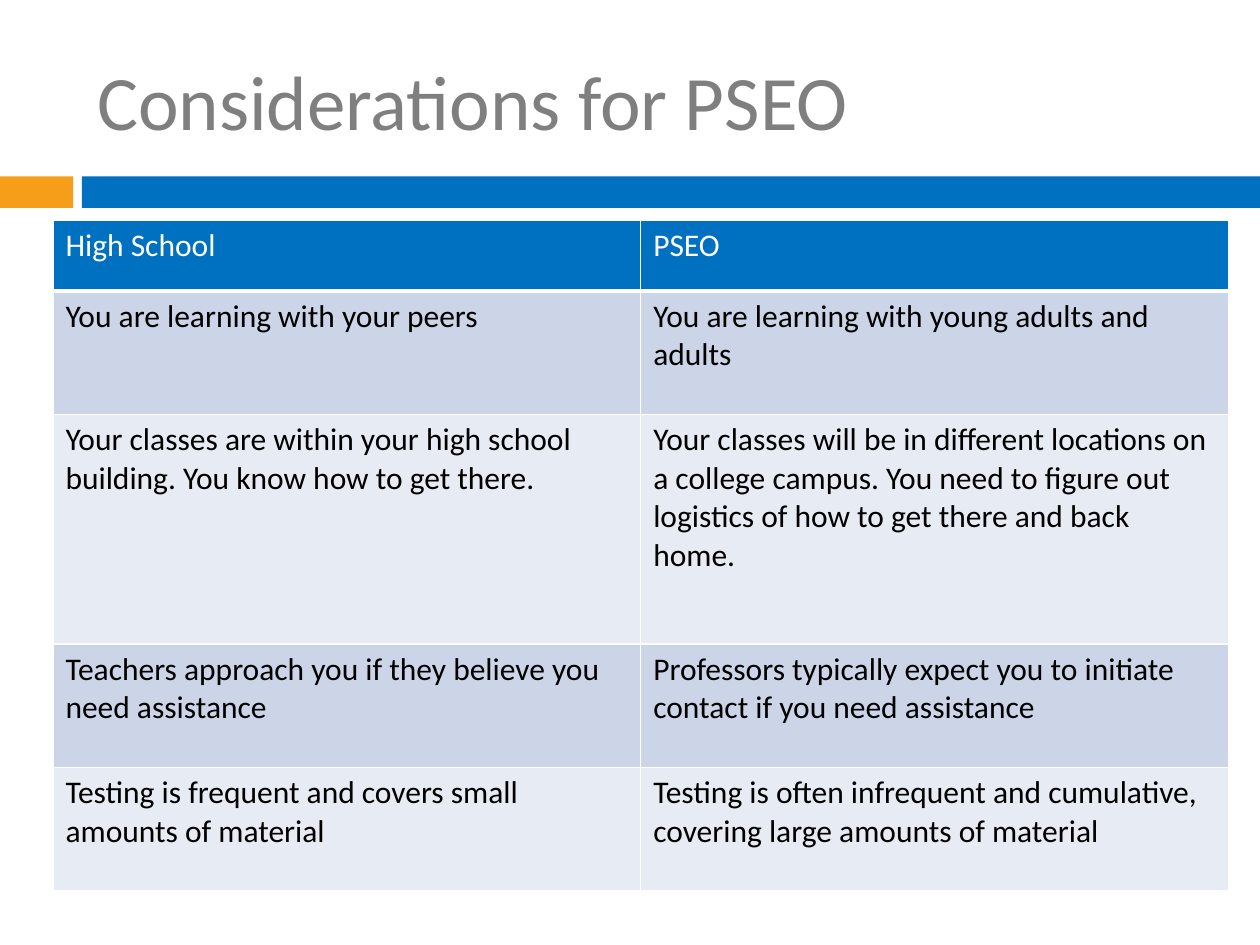
from lxml.etree import SubElement
from pptx import Presentation
from pptx.dml.color import RGBColor
from pptx.enum.shapes import MSO_SHAPE
from pptx.enum.text import MSO_ANCHOR, PP_ALIGN
from pptx.oxml.ns import qn
from pptx.util import Inches, Pt

COLORS = {
    "orange": "F69D1A",
    "blue": "0070C0",
    "title": "7F7F7F",
    "white": "FFFFFF",
    "black": "000000",
    "band_dark": "CCD5E8",
    "band_light": "E7EBF4",
}
ROWS = [
    ("High School", "PSEO"),
    ("You are learning with your peers",
     "You are learning with young adults and adults"),
    ("Your classes are within your high school building. "
     "You know how to get there.",
     "Your classes will be in different locations on a college campus. "
     "You need to figure out logistics of how to get there and back home."),
    ("Teachers approach you if they believe you need assistance",
     "Professors typically expect you to initiate contact if you need assistance"),
    ("Testing is frequent and covers small amounts of material",
     "Testing is often infrequent and cumulative, "
     "covering large amounts of material"),
]
ROW_HEIGHTS = [0.56, 0.98, 1.82, 0.98, 0.98]


def rgb(name):
    """Return the named colour."""
    return RGBColor.from_string(COLORS[name])


def write(tf, text, size=18, color="black", font="Calibri"):
    """Put one formatted, left-aligned paragraph in a text frame."""
    p = tf.paragraphs[0]
    p.alignment = PP_ALIGN.LEFT
    r = p.add_run()
    r.text = text
    r.font.name = font
    r.font.size = Pt(size)
    r.font.bold = False
    r.font.color.rgb = rgb(color)


def add_title(s, text):
    """Place and format the title placeholder."""
    sp = s.shapes.title
    sp.left, sp.top = Inches(0.67), Inches(0.25)
    sp.width, sp.height = Inches(8.92), Inches(1.08)
    tf = sp.text_frame
    tf.word_wrap = True
    tf.vertical_anchor = MSO_ANCHOR.MIDDLE
    write(tf, text, size=44, color="title")


def add_bar(s, left, width, color):
    """Add one part of the bar under the title."""
    sp = s.shapes.add_shape(MSO_SHAPE.RECTANGLE, Inches(left), Inches(1.4),
                            Inches(width), Inches(0.25))
    sp.shadow.inherit = False
    sp.fill.solid()
    sp.fill.fore_color.rgb = rgb(color)
    sp.line.fill.background()


def set_borders(cell, bottom=1):
    """Draw white borders around a cell."""
    tcPr = cell._tc.get_or_add_tcPr()
    for side, width in (("L", 1), ("R", 1), ("T", 1), ("B", bottom)):
        ln = SubElement(tcPr, qn(f"a:ln{side}"), w=str(Pt(width)))
        fill = SubElement(ln, qn("a:solidFill"))
        SubElement(fill, qn("a:srgbClr"), val=COLORS["white"])


def add_comparison(s):
    """Add the table with its header and alternating bands."""
    table = s.shapes.add_table(len(ROWS), 2, Inches(0.42), Inches(1.75),
                               Inches(9.33), Inches(sum(ROW_HEIGHTS))).table
    for i, (texts, height) in enumerate(zip(ROWS, ROW_HEIGHTS)):
        table.rows[i].height = Inches(height)
        header = i == 0
        band = "blue" if header else "band_dark" if i % 2 else "band_light"
        for j, text in enumerate(texts):
            cell = table.cell(i, j)
            set_borders(cell, bottom=3 if header else 1)
            cell.fill.solid()
            cell.fill.fore_color.rgb = rgb(band)
            write(cell.text_frame, text, color="white" if header else "black")


def main():
    """Build and save the slide."""
    prs = Presentation()
    prs.slide_width, prs.slide_height = Inches(10), Inches(7.5)
    s = prs.slides.add_slide(prs.slide_layouts[5])
    add_bar(s, 0, 0.58, "orange")
    add_bar(s, 0.65, 9.35, "blue")
    add_title(s, "Considerations for PSEO")
    add_comparison(s)
    prs.save("out.pptx")


if __name__ == "__main__":
    main()
